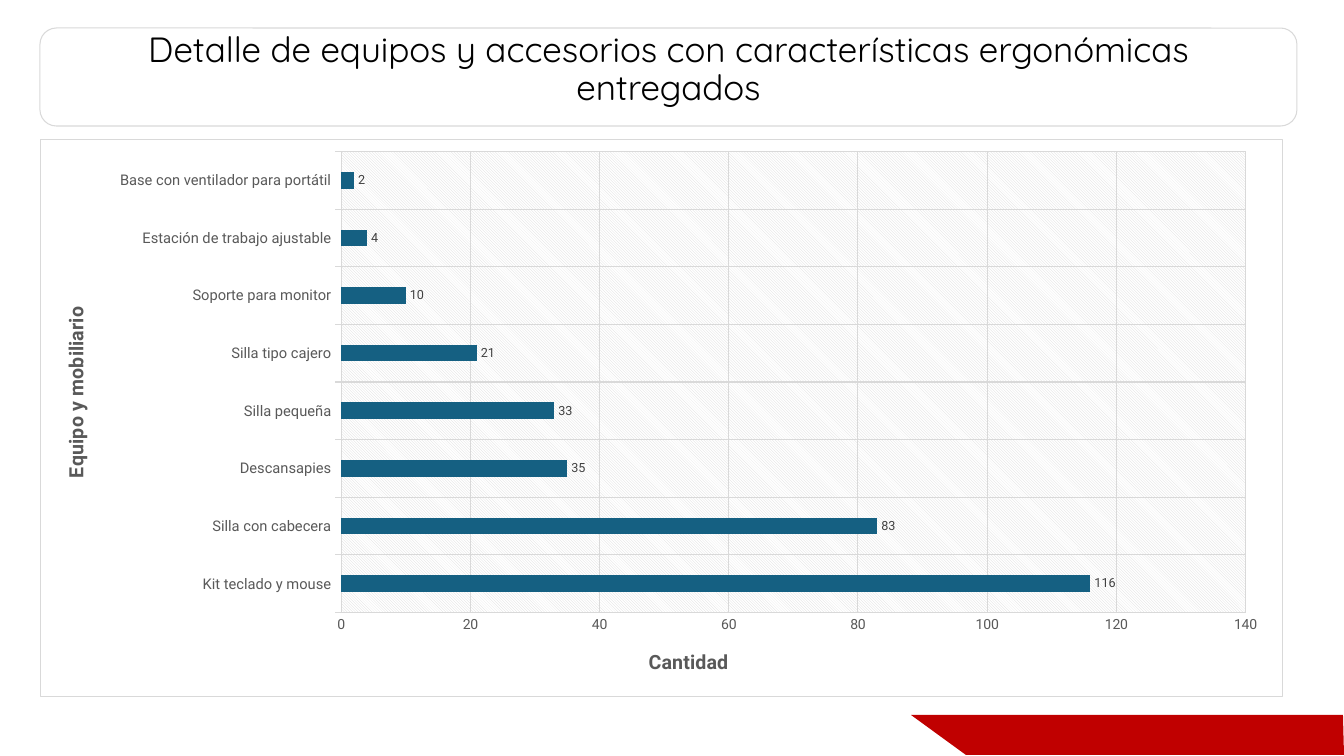
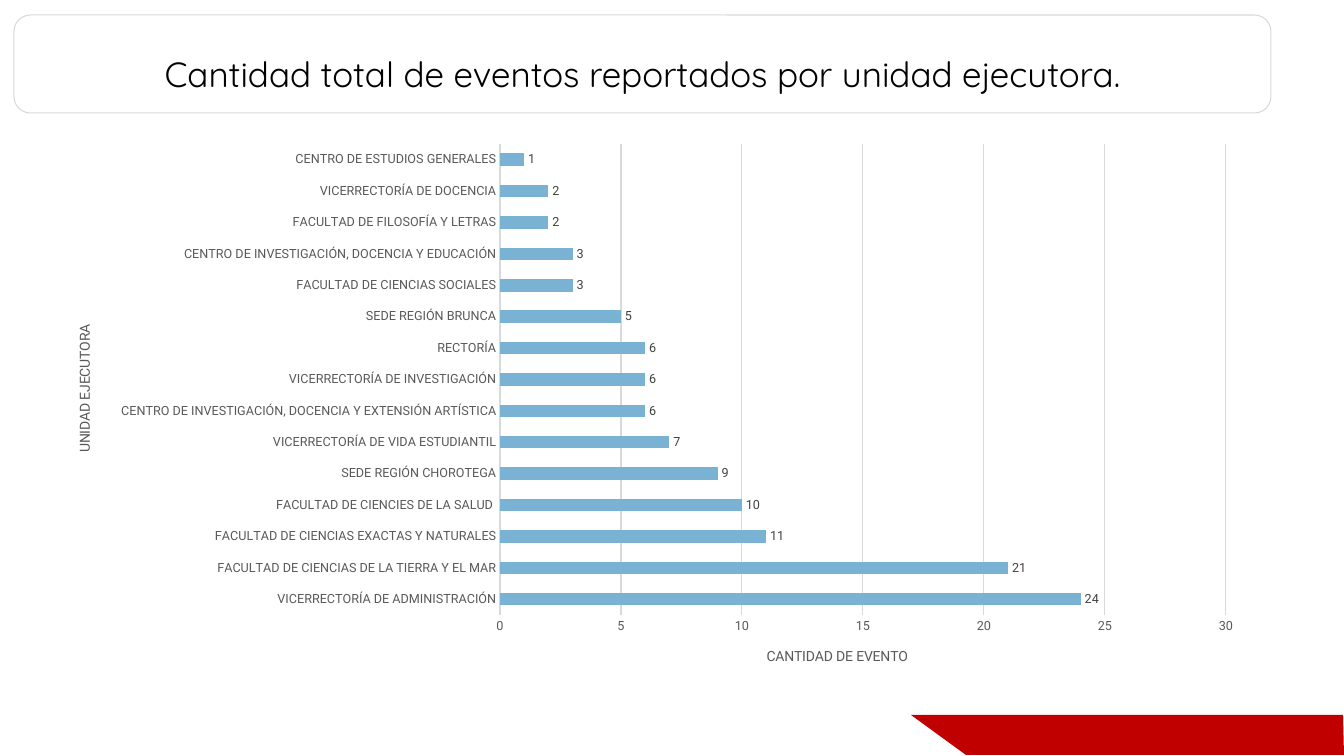
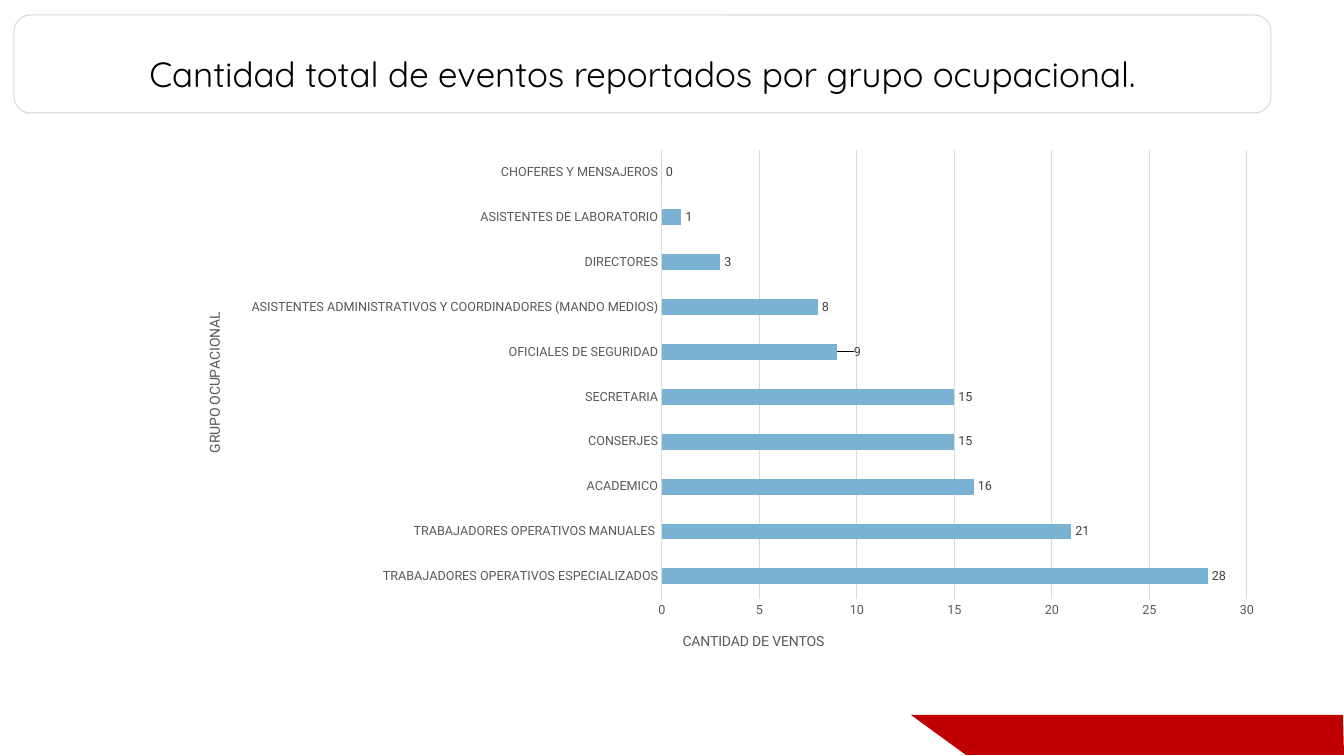
from pptx import Presentation
from pptx.chart.data import CategoryChartData as Data
from pptx.dml.color import RGBColor as Rgb
from pptx.enum.chart import XL_CHART_TYPE as Kind, XL_LABEL_POSITION as Spot, XL_TICK_MARK as Tick
from pptx.enum.shapes import MSO_SHAPE as Form
from pptx.enum.text import MSO_ANCHOR as Anchor, PP_ALIGN as Align
from pptx.oxml import parse_xml
from pptx.oxml.ns import nsdecls
from pptx.util import Pt

UNIT = 914400 / 100.8
HUES = {"ink": "000000", "red": "C00000", "rule": "D9D9D9", "axis": "595959",
        "label": "404040", "deep": "156082", "sky": "7AB2D3", "white": "FFFFFF"}


def px(num):
    return round(num * UNIT)


class Deck:
    """Holds the shared style and the current slide."""

    def __init__(self):
        self.prs = Presentation()
        self.prs.slide_width, self.prs.slide_height = px(1344), px(756)
        self.slide = None

    def hue(self, name):
        return Rgb.from_string(HUES[name])

    def font(self, font, size, hue, face="Roboto", bold=False):
        font.size, font.name, font.bold = Pt(size), face, bold
        font.color.rgb = self.hue(hue)

    def line(self, line, hue="rule"):
        if hue:
            line.color.rgb, line.width = self.hue(hue), Pt(0.75)
        else:
            line.fill.background()

    def page(self, title, left, top):
        self.slide = self.prs.slides.add_slide(self.prs.slide_layouts[6])
        self.band()
        self.title(title, left, top)

    def band(self):
        pen = self.slide.shapes.build_freeform(1343, 715, UNIT)
        pen.add_line_segments([(911, 715), (966, 755), (1344, 755)])
        band = pen.convert_to_shape()
        band.shadow.inherit = False
        band.fill.solid()
        band.fill.fore_color.rgb = self.hue("red")
        self.line(band.line, None)

    def title(self, text, left, top):
        box = self.slide.shapes.add_shape(
            Form.ROUNDED_RECTANGLE, px(left), px(top), px(1257), px(98))
        box.shadow.inherit = False
        box.fill.background()
        self.line(box.line)
        frame = box.text_frame
        frame.word_wrap, frame.vertical_anchor = True, Anchor.BOTTOM
        frame.margin_left = frame.margin_right = px(13)
        frame.margin_top = frame.margin_bottom = px(13)
        frame.text = text
        para = frame.paragraphs[0]
        para.alignment, para.line_spacing = Align.CENTER, 0.9
        self.font(para.runs[0].font, 25, "ink", "Quicksand")

    def place(self, node, slot, spots, modes=("xMode", "yMode"), inner=False):
        for old in node.xpath("c:layout"):
            node.remove(old)
        tags = '<c:layoutTarget val="inner"/>' if inner else ""
        tags += "".join(f'<c:{mode} val="edge"/>' for mode in modes)
        tags += "".join(f'<c:{key} val="{val:.4f}"/>' for key, val in zip("xywh", spots))
        node.insert(slot, parse_xml(
            f'<c:layout {nsdecls("c")}><c:manualLayout>{tags}</c:manualLayout></c:layout>'))

    def solid(self, hue):
        return f'<a:solidFill><a:srgbClr val="{HUES[hue]}"/></a:solidFill>'

    def paint(self, fill, line=""):
        return parse_xml(f'<c:spPr {nsdecls("c", "a")}>{fill}{line}</c:spPr>')

    def bars(self, rows, box, plot, gap, top, step, hue="sky", size=9):
        data = Data()
        data.categories = [name for name, _ in rows]
        data.add_series("Series 1", [val for _, val in rows])
        chart = self.slide.shapes.add_chart(
            Kind.BAR_CLUSTERED, *[px(num) for num in box], data).chart
        chart.has_legend = chart.has_title = False
        self.font(chart.font, 10, "ink")
        bars = chart.plots[0]
        bars.gap_width, bars.vary_by_categories = gap, False
        row = bars.series[0]
        row.format.fill.solid()
        row.format.fill.fore_color.rgb = self.hue(hue)
        tags = row.data_labels
        tags.show_value, tags.position = True, Spot.OUTSIDE_END
        self.font(tags.font, 9, "label")
        for lead in chart._chartSpace.xpath(".//c:showLeaderLines"):
            lead.getparent().remove(lead)
        for axis in (chart.category_axis, chart.value_axis):
            axis.major_tick_mark = axis.minor_tick_mark = Tick.NONE
            self.font(axis.tick_labels.font, size, "axis")
            self.line(axis.format.line, None)
        axis = chart.value_axis
        axis.minimum_scale, axis.maximum_scale, axis.major_unit = 0, top, step
        self.line(axis.major_gridlines.format.line)
        x, y, wide, high = box
        left, head, width, tall = plot
        area = chart._chartSpace.xpath("c:chart/c:plotArea")[0]
        spots = (left - x) / wide, (head - y) / high, width / wide, tall / high
        self.place(area, 0, spots, inner=True)
        return chart

    def names(self, chart, box, cat, val, size=10, bold=False):
        x, y, wide, high = box
        for axis, tag, (text, left, top) in ((chart.category_axis, "catAx", cat),
                                             (chart.value_axis, "valAx", val)):
            frame = axis.axis_title.text_frame
            frame.text = text
            self.font(frame.paragraphs[0].runs[0].font, size, "axis", bold=bold)
            node = chart._chartSpace.xpath(f".//c:{tag}/c:title")[0]
            self.place(node, 1, ((left - x) / wide, (top - y) / high))
            if tag == "catAx":
                body = node.xpath(".//a:bodyPr")[0]
                body.set("rot", "-5400000")
                body.set("vert", "horz")

    def back(self, chart, edge=False):
        line = f'<a:ln w="9525">{self.solid("rule")}</a:ln>' if edge else "<a:ln><a:noFill/></a:ln>"
        chart._chartSpace.xpath("c:chart")[0].addnext(self.paint(self.solid("white"), line))

    def hatch(self, chart):
        fill = ('<a:pattFill prst="ltDnDiag">'
                f'<a:fgClr><a:srgbClr val="{HUES["rule"]}"/></a:fgClr>'
                f'<a:bgClr><a:srgbClr val="{HUES["white"]}"/></a:bgClr></a:pattFill>')
        chart._chartSpace.xpath("c:chart/c:plotArea")[0].append(self.paint(fill))

    def nudge(self, chart, spot, shift):
        tag = chart.plots[0].series[0].points[spot].data_label
        tag.position = Spot.OUTSIDE_END
        self.font(tag.font, 9, "label")
        node = chart._chartSpace.xpath(f".//c:dLbl[c:idx/@val='{spot}']")[0]
        self.place(node, 1, (shift, 0), modes=())


GEAR = [("Kit teclado y mouse", 116), ("Silla con cabecera", 83), ("Descansapies", 35),
        ("Silla pequeña", 33), ("Silla tipo cajero", 21), ("Soporte para monitor", 10),
        ("Estación de trabajo ajustable", 4), ("Base con ventilador para portátil", 2)]
UNITS = [("VICERRECTORÍA DE ADMINISTRACIÓN", 24),
         ("FACULTAD DE CIENCIAS DE LA TIERRA Y EL MAR", 21),
         ("FACULTAD DE CIENCIAS EXACTAS Y NATURALES", 11),
         ("FACULTAD DE CIENCIES DE LA SALUD ", 10),
         ("SEDE REGIÓN CHOROTEGA", 9),
         ("VICERRECTORÍA DE VIDA ESTUDIANTIL", 7),
         ("CENTRO DE INVESTIGACIÓN, DOCENCIA Y EXTENSIÓN ARTÍSTICA", 6),
         ("VICERRECTORÍA DE INVESTIGACIÓN", 6),
         ("RECTORÍA", 6),
         ("SEDE REGIÓN BRUNCA", 5),
         ("FACULTAD DE CIENCIAS SOCIALES", 3),
         ("CENTRO DE INVESTIGACIÓN, DOCENCIA Y EDUCACIÓN", 3),
         ("FACULTAD DE FILOSOFÍA Y LETRAS", 2),
         ("VICERRECTORÍA DE DOCENCIA", 2),
         ("CENTRO DE ESTUDIOS GENERALES", 1)]
JOBS = [("TRABAJADORES OPERATIVOS ESPECIALIZADOS", 28),
        ("TRABAJADORES OPERATIVOS MANUALES ", 21),
        ("ACADEMICO", 16), ("CONSERJES", 15), ("SECRETARIA", 15),
        ("OFICIALES DE SEGURIDAD", 9),
        ("ASISTENTES ADMINISTRATIVOS Y COORDINADORES (MANDO MEDIOS)", 8),
        ("DIRECTORES", 3), ("ASISTENTES DE LABORATORIO", 1), ("CHOFERES Y MENSAJEROS", 0)]


def gear(deck):
    deck.page("Detalle de equipos y accesorios con características ergonómicas entregados", 40, 28)
    box = (40, 139, 1243, 558)
    chart = deck.bars(GEAR, box, (341, 151, 905, 462), 247, 140, 20, "deep", 10)
    axis = chart.category_axis
    axis.major_tick_mark = Tick.OUTSIDE
    axis.tick_labels.font.size = Pt(10.5)
    deck.line(axis.format.line)
    deck.line(axis.major_gridlines.format.line)
    deck.names(chart, box, ("Equipo y mobiliario", 58, 303), ("Cantidad", 645, 645), 14, True)
    deck.back(chart, True)
    deck.hatch(chart)


def units(deck):
    deck.page("Cantidad total de eventos reportados por unidad ejecutora.", 14, 15)
    box = (55, 133, 1203, 554)
    chart = deck.bars(UNITS, box, (500, 144, 726, 471), 150, 30, 5)
    deck.names(chart, box, ("UNIDAD EJECUTORA", 73, 322), ("CANTIDAD DE EVENTO", 764, 645))
    deck.back(chart)


def jobs(deck):
    deck.page("Cantidad total de eventos reportados por grupo ocupacional.", 14, 15)
    box = (14, 127, 1256, 566)
    chart = deck.bars(JOBS, box, (662, 150, 585, 449), 182, 30, 5)
    deck.line(chart.category_axis.format.line)
    deck.names(chart, box, ("GRUPO OCUPACIONAL", 203, 310), ("CANTIDAD DE VENTOS", 680, 630))
    deck.nudge(chart, 5, 0.01)


def main():
    deck = Deck()
    for draw in (gear, units, jobs):
        draw(deck)
    deck.prs.save("out.pptx")


if __name__ == "__main__":
    main()
